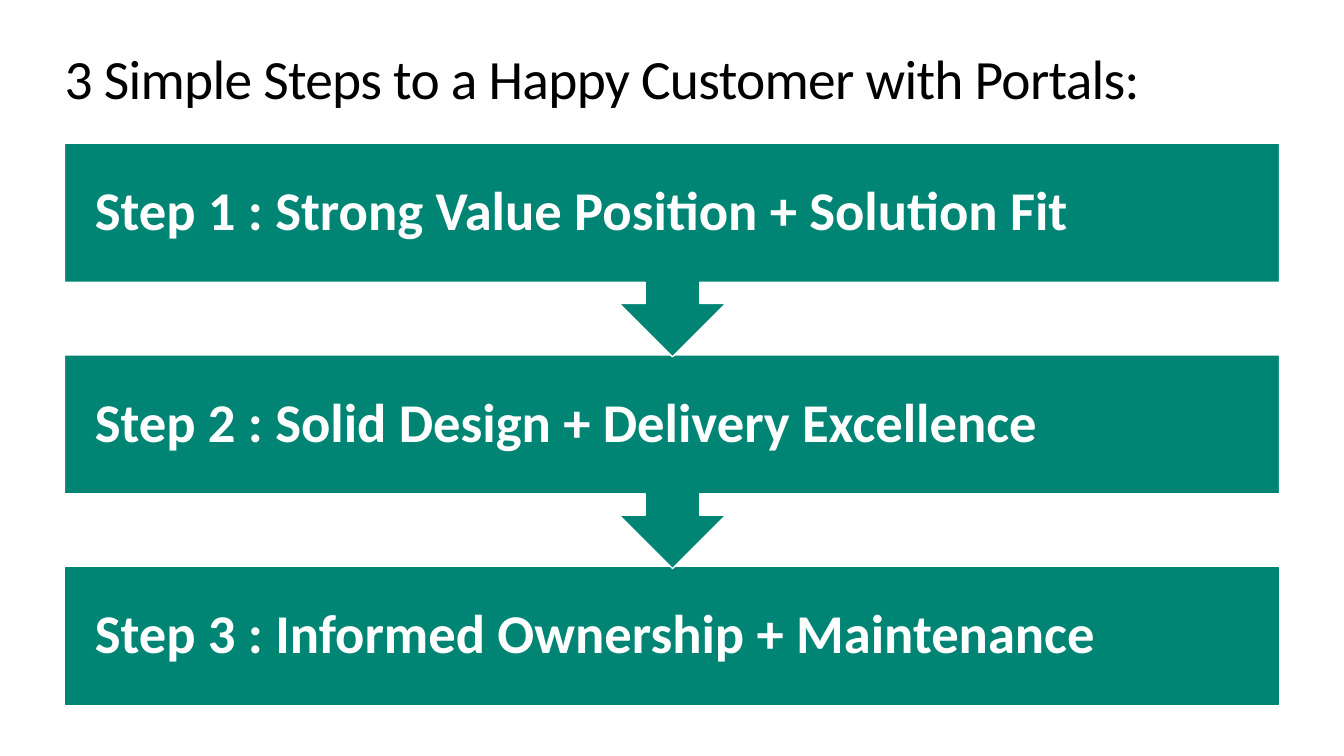
import pptx
import pptx.dml.color
import pptx.enum.text
import pptx.util

PX = 9144  # EMU per px, 100 px to the inch
COLORS = {"step": "008575", "white": "FFFFFF", "title": "000000"}
FONT = "Calibri"

# Layout in px
LEFT, RIGHT, CENTER = 64, 1269, 667
FIRST_TOP, PITCH, BAR_HEIGHT = 142, 210, 138
STEM_HALF, HEAD_HALF = 27, 53
STEM_HEIGHT, ARROW_HEIGHT = 21, 74
PADDING = 30

STEPS = [
    "Step 1 : Strong Value Position + Solution Fit",
    "Step 2 : Solid Design + Delivery Excellence",
    "Step 3 : Informed Ownership + Maintenance",
]


def px(length):
    return pptx.util.Emu(length * PX)


def color(name):
    return pptx.dml.color.RGBColor.from_string(COLORS[name])


def set_text(shape, text, size, color_name, bold, padding, bottom):
    frame = shape.text_frame
    frame.text = text
    frame.word_wrap = True
    frame.auto_size = pptx.enum.text.MSO_AUTO_SIZE.NONE
    frame.vertical_anchor = pptx.enum.text.MSO_ANCHOR.MIDDLE
    frame.margin_left = frame.margin_top = frame.margin_right = px(padding)
    frame.margin_bottom = px(bottom)
    paragraph = frame.paragraphs[0]
    paragraph.alignment = pptx.enum.text.PP_ALIGN.LEFT
    paragraph.line_spacing = 0.9
    paragraph.font.name = FONT
    paragraph.font.size = pptx.util.Pt(size)
    paragraph.font.bold = bold
    paragraph.font.color.rgb = color(color_name)


def add_title(slide, text):
    title = slide.shapes.title
    title.left, title.top = px(LEFT), px(50)
    title.width, title.height = px(RIGHT - LEFT), px(61)
    set_text(title, text, 39.6, "title", False, 0, 0)
    # Slightly tightened letter spacing
    run = title.text_frame.paragraphs[0].runs[0]
    run._r.get_or_add_rPr().set("spc", "-50")


def add_step(slide, text, top, has_arrow):
    bottom = top + BAR_HEIGHT
    points = [(RIGHT, top), (RIGHT, bottom)]
    if has_arrow:
        neck = bottom + STEM_HEIGHT
        points += [
            (CENTER + STEM_HALF, bottom),
            (CENTER + STEM_HALF, neck),
            (CENTER + HEAD_HALF, neck),
            (CENTER, bottom + ARROW_HEIGHT),
            (CENTER - HEAD_HALF, neck),
            (CENTER - STEM_HALF, neck),
            (CENTER - STEM_HALF, bottom),
        ]
    points.append((LEFT, bottom))
    builder = slide.shapes.build_freeform(LEFT, top, scale=PX)
    builder.add_line_segments(points, close=True)
    shape = builder.convert_to_shape()
    shape.shadow.inherit = False
    shape.fill.solid()
    shape.fill.fore_color.rgb = color("step")
    shape.line.color.rgb = color("white")
    shape.line.width = pptx.util.Pt(1)
    # Keep the text centred in the bar, clear of the arrow
    text_bottom = PADDING + (ARROW_HEIGHT if has_arrow else 0)
    set_text(shape, text, 39, "white", True, PADDING, text_bottom)


def main():
    presentation = pptx.Presentation()
    presentation.slide_width, presentation.slide_height = px(1333), px(750)
    slide = presentation.slides.add_slide(presentation.slide_layouts[5])

    add_title(slide, "3 Simple Steps to a Happy Customer with Portals:")

    # Last step first, so each arrow tip lies over the bar below
    last = len(STEPS) - 1
    for index in range(last, -1, -1):
        add_step(slide, STEPS[index], FIRST_TOP + index * PITCH, index < last)

    presentation.save("out.pptx")


if __name__ == "__main__":
    main()
